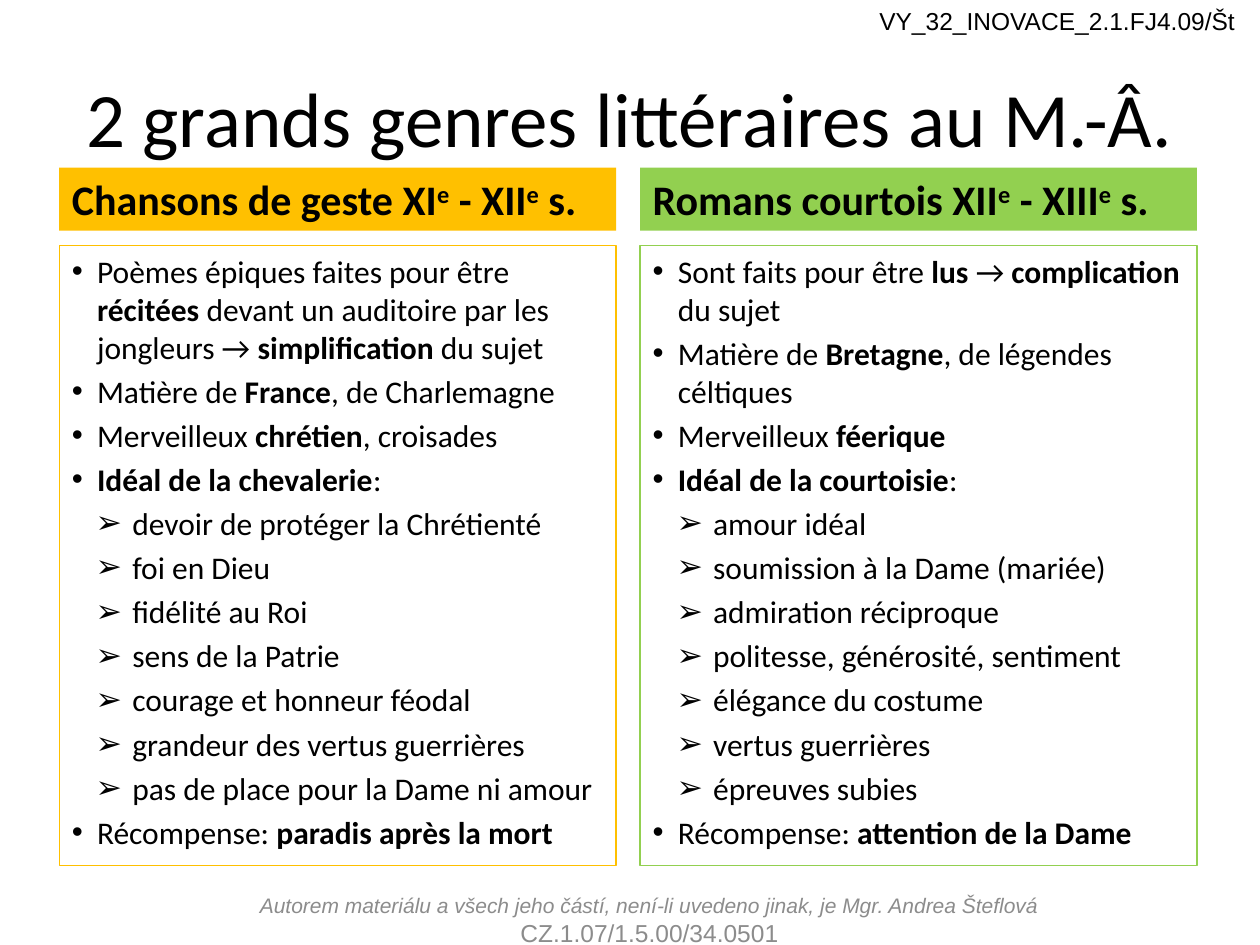
import pptx
import pptx.util
import pptx.dml.color
import pptx.enum.text
import lxml.etree
from pptx.oxml.ns import qn
from dataclasses import dataclass

Inches = pptx.util.Inches
Pt = pptx.util.Pt
Color = pptx.dml.color.RGBColor.from_string
Align = pptx.enum.text.PP_ALIGN
Anchor = pptx.enum.text.MSO_ANCHOR
Fit = pptx.enum.text.MSO_AUTO_SIZE


@dataclass
class Theme:
    ink: str = "000000"
    grey: str = "8C8C8C"
    gold: str = "FFC000"
    green: str = "92D050"
    title: int = 44
    head: int = 24
    body: int = 18
    code: int = 14
    note: int = 12
    main: str = "Calibri"
    side: str = "Arial"


theme = Theme()


def style(run, size, face, color, bold=False, slant=False):
    font = run.font
    font.size, font.name = Pt(size), face
    font.bold, font.italic = bold, slant
    font.color.rgb = Color(color)


def place(shape, left, top, width, height, anchor):
    shape.left, shape.top = Inches(left), Inches(top)
    shape.width, shape.height = Inches(width), Inches(height)
    frame = shape.text_frame
    frame.word_wrap = True
    frame.auto_size = Fit.NONE
    frame.vertical_anchor = anchor
    return frame


columns = [
    (0.47, theme.gold, "Chansons de geste XI^e^ - XII^e^ s.", [
        "Poèmes épiques faites pour être *récitées* devant un auditoire "
        "par les jongleurs → *simplification* du sujet",
        "Matière de *France*, de Charlemagne",
        "Merveilleux *chrétien*, croisades",
        "*Idéal de la chevalerie*:",
        "> devoir de protéger la Chrétienté",
        "> foi en Dieu",
        "> fidélité au Roi",
        "> sens de la Patrie",
        "> courage et honneur féodal",
        "> grandeur des vertus guerrières",
        "> pas de place pour la Dame ni amour",
        "Récompense: *paradis après la mort*",
    ]),
    (5.08, theme.green, "Romans courtois XII^e^ - XIII^e^ s.", [
        "Sont faits pour être *lus *→ *complication* du sujet",
        "Matière de *Bretagne*, de légendes céltiques",
        "Merveilleux *féerique*",
        "*Idéal de la courtoisie*:",
        "> amour idéal",
        "> soumission à la Dame (mariée)",
        "> admiration réciproque",
        "> politesse, générosité, sentiment",
        "> élégance du costume",
        "> vertus guerrières",
        "> épreuves subies",
        "Récompense: *attention de la Dame*",
    ]),
]

deck = pptx.Presentation()
deck.slide_width, deck.slide_height = Inches(10), Inches(7.5)
slide = deck.slides.add_slide(deck.slide_layouts[4])
title, *slots = list(slide.placeholders)[:5]

frame = place(title, 0.5, 0.3, 9, 1.25, Anchor.MIDDLE)
frame.text = "2 grands genres littéraires au M.-Â."
frame.paragraphs[0].alignment = Align.CENTER
style(frame.paragraphs[0].runs[0], theme.title, theme.main, theme.ink)

for (left, color, label, items), head, body in zip(columns, slots[::2], slots[1::2]):
    frame = place(head, left, 1.33, 4.42, 0.5, Anchor.BOTTOM)
    head.fill.solid()
    head.fill.fore_color.rgb = Color(color)
    for pos, part in enumerate(label.split("^")):
        run = frame.paragraphs[0].add_run()
        run.text = part
        style(run, theme.head, theme.main, theme.ink, bold=True)
        if pos % 2:
            run.font._element.set("baseline", "30000")

    frame = place(body, left, 1.95, 4.42, 4.92, Anchor.TOP)
    body.line.color.rgb = Color(color)
    body.line.width = Pt(0.75)
    for row, item in enumerate(items):
        para = frame.paragraphs[0] if row == 0 else frame.add_paragraph()
        sub = item.startswith("> ")
        para.level = int(sub)
        margin, indent, mark = (0.48, -0.29, "➢") if sub else (0.2, -0.2, "•")
        props = para._p.get_or_add_pPr()
        props.set("marL", str(Inches(margin)))
        props.set("indent", str(Inches(indent)))
        lxml.etree.SubElement(props, qn("a:buFont")).set("typeface", theme.side)
        lxml.etree.SubElement(props, qn("a:buChar")).set("char", mark)
        for pos, part in enumerate(item.removeprefix("> ").split("*")):
            if part:
                run = para.add_run()
                run.text = part
                style(run, theme.body, theme.main, theme.ink, bold=pos % 2 == 1)

code = slide.shapes.add_textbox(0, 0, 0, 0)
frame = place(code, 6.88, 0, 3.12, 0.34, Anchor.TOP)
frame.text = "VY_32_INOVACE_2.1.FJ4.09/Št"
style(frame.paragraphs[0].runs[0], theme.code, theme.side, theme.ink)

foot = slide.shapes.add_textbox(0, 0, 0, 0)
frame = place(foot, 1.95, 7.1, 6.41, 0.4, Anchor.MIDDLE)
frame.text = (
    "Autorem materiálu a všech jeho částí, není-li uvedeno jinak, "
    "je Mgr. Andrea Šteflová\nCZ.1.07/1.5.00/34.0501"
)
for para, size, slant in zip(frame.paragraphs, (theme.note, theme.code), (True, False)):
    para.alignment = Align.CENTER
    style(para.runs[0], size, theme.side, theme.grey, slant=slant)

deck.save("out.pptx")
